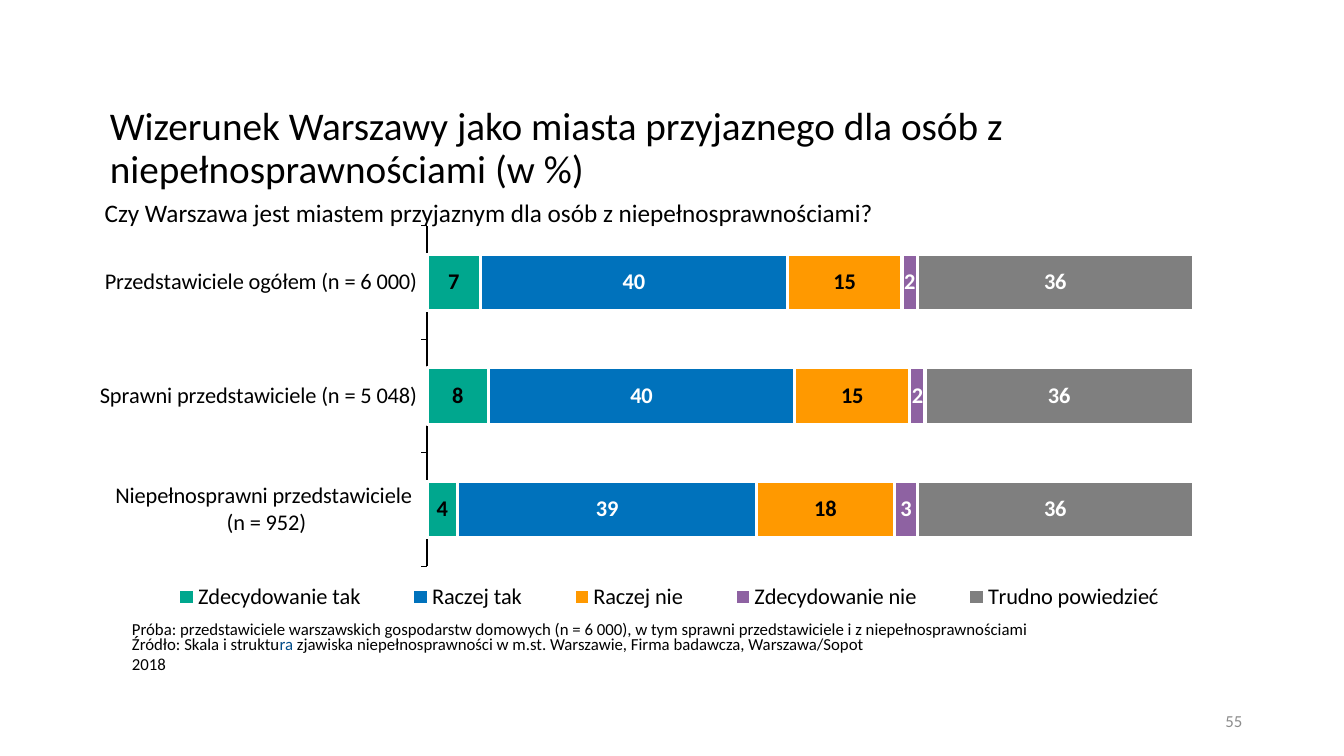
from pptx import Presentation
from pptx import util as u
from pptx.chart.data import CategoryChartData
from pptx.dml.color import RGBColor
from pptx.enum import chart as ch, text as tx
from pptx.oxml import parse_xml
from pptx.oxml.ns import nsdecls, qn

ink = RGBColor.from_string
FONT = "Calibri"
BLACK, WHITE = "000000", "FFFFFF"


def write(box, *spans, size=12, color=BLACK, align=tx.PP_ALIGN.LEFT,
          anchor=tx.MSO_ANCHOR.TOP, line=1.0, after=0):
    """Fill a box with one paragraph; a span is a text or a (text, colour) pair."""
    frame = box.text_frame
    frame.word_wrap = True
    frame.auto_size = tx.MSO_AUTO_SIZE.NONE
    frame.vertical_anchor = anchor
    para = frame.paragraphs[0]
    para.alignment = align
    para.line_spacing = line
    para.space_before = u.Pt(0)
    para.space_after = u.Pt(after)
    for item in spans:
        words, shade = item if isinstance(item, tuple) else (item, color)
        span = para.add_run()
        span.text = words
        span.font.name = FONT
        span.font.size = u.Pt(size)
        span.font.color.rgb = ink(shade)


def lay_out(part, index, target, **sides):
    """Give a chart part a fixed place, in fractions of the chart."""
    for old in part.findall(qn("c:layout")):
        part.remove(old)
    modes = '<c:xMode val="edge"/><c:yMode val="edge"/>'
    values = "".join(f'<c:{side} val="{value}"/>' for side, value in sides.items())
    part.insert(index, parse_xml(
        f'<c:layout {nsdecls("c")}><c:manualLayout>{target}{modes}{values}'
        '</c:manualLayout></c:layout>'))


deck = Presentation()
deck.slide_width, deck.slide_height = u.Inches(13.33), u.Inches(7.5)
page = deck.slides.add_slide(deck.slide_layouts[5])

# Title
title = page.shapes.title
title.left, title.top = u.Inches(0.99), u.Inches(0.99)
title.width, title.height = u.Inches(11.5), u.Inches(0.98)
write(title, "Wizerunek Warszawy jako miasta przyjaznego dla osób z niepełnosprawnościami (w %)",
      size=28, anchor=tx.MSO_ANCHOR.MIDDLE, line=0.9)

# Chart data
data = CategoryChartData(number_format="###0")
data.categories = ["Przedstawiciele ogółem (n = 6 000)",
                   "Sprawni przedstawiciele (n = 5 048)",
                   "Niepełnosprawni przedstawiciele \n(n = 952)"]
answers = [
    ("Zdecydowanie tak", (7, 8, 4), "00A78E", BLACK),
    ("Raczej tak", (40, 40, 39), "0072BC", WHITE),
    ("Raczej nie", (15, 15, 18), "FF9900", BLACK),
    ("Zdecydowanie nie", (2, 2, 3), "8E62A2", WHITE),
    ("Trudno powiedzieć", (36, 36, 36), "7F7F7F", WHITE),
]
for name, values, _, _ in answers:
    data.add_series(name, values)

# Stacked bars
chart = page.shapes.add_chart(
    ch.XL_CHART_TYPE.BAR_STACKED, u.Inches(0.99), u.Inches(2.2),
    u.Inches(11.18), u.Inches(4.07), data).chart
chart.has_title = False
chart.font.name, chart.font.size = FONT, u.Pt(16)
chart.font.color.rgb = ink(BLACK)
plot = chart.plots[0]
plot.gap_width, plot.overlap = 100, 100
plot.vary_by_categories = False
for series, (_, _, fill, label_color) in zip(plot.series, answers):
    series.format.fill.solid()
    series.format.fill.fore_color.rgb = ink(fill)
    series.format.line.color.rgb = ink(WHITE)
    series.format.line.width = u.Pt(2.25)
    labels = series.data_labels
    labels.show_value = True
    labels.number_format, labels.number_format_is_linked = "###0", False
    labels.font.name, labels.font.size = FONT, u.Pt(16)
    labels.font.bold = True
    labels.font.color.rgb = ink(label_color)

# Axes
groups = chart.category_axis
groups.reverse_order = True
groups.has_major_gridlines = False
groups.major_tick_mark = ch.XL_TICK_MARK.OUTSIDE
groups.format.line.color.rgb = ink(BLACK)
groups.format.line.width = u.Pt(0.75)
percent = chart.value_axis
percent.minimum_scale, percent.maximum_scale = 0, 100
percent.has_major_gridlines = False
percent.visible = False

# Legend and places inside the chart
chart.has_legend = True
legend = chart.legend
legend.position = ch.XL_LEGEND_POSITION.BOTTOM
legend.include_in_layout = False
legend.font.name, legend.font.size = FONT, u.Pt(16)
legend.font.color.rgb = ink(BLACK)
lay_out(legend._element, 1, "", x=0.03, y=0.87, w=0.95, h=0.09)
lay_out(plot._element.getparent(), 0, '<c:layoutTarget val="inner"/>',
        x=0.29, y=0.01, w=0.68, h=0.83)

# Question, notes and page number
texts = [
    ((0.94, 1.86, 11.25, 0.43),
     ["Czy Warszawa jest miastem przyjaznym dla osób z niepełnosprawnościami?"],
     dict(size=18, line=1.15, after=12)),
    ((1.21, 6.06, 11.25, 0.32),
     ["Próba: przedstawiciele warszawskich gospodarstw domowych (n = 6 000), "
      "w tym sprawni przedstawiciele i z niepełnosprawnościami"],
     dict(line=1.15, after=12)),
    ((1.21, 6.24, 7.69, 0.3),
     ["Źródło: Skala i struktu", ("ra", "004B88"),
      " zjawiska niepełnosprawności w m.st. Warszawie, Firma badawcza, Warszawa/Sopot 2018"],
     {}),
    ((9.42, 6.95, 3, 0.4), ["55"],
     dict(color="8C8C8C", align=tx.PP_ALIGN.RIGHT, anchor=tx.MSO_ANCHOR.MIDDLE)),
]
for place, spans, style in texts:
    write(page.shapes.add_textbox(*map(u.Inches, place)), *spans, **style)

deck.save("out.pptx")
